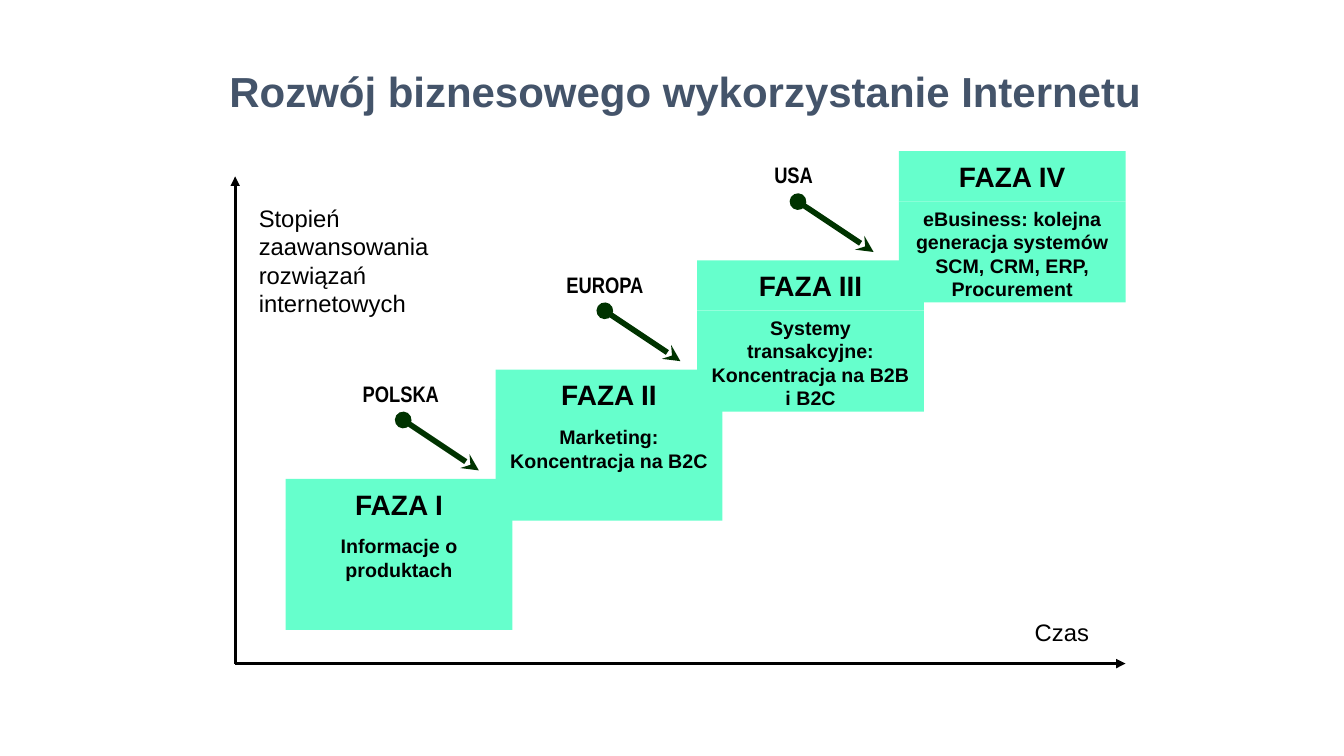
"""Build the slide on the phases of business use of the Internet."""
from lxml.etree import SubElement
from pptx import Presentation
from pptx.dml.color import RGBColor
from pptx.enum.shapes import MSO_CONNECTOR, MSO_SHAPE
from pptx.enum.text import MSO_ANCHOR, MSO_AUTO_SIZE, PP_ALIGN
from pptx.oxml.ns import qn
from pptx.util import Pt

PX = 9525
BLACK = RGBColor(0x00, 0x00, 0x00)
SLATE = RGBColor(0x44, 0x54, 0x6A)
MINT = RGBColor(0x66, 0xFF, 0xCC)
GREEN = RGBColor(0x00, 0x33, 0x00)

prs = Presentation()
prs.slide_width, prs.slide_height = 1280 * PX, 720 * PX
s = prs.slides.add_slide(prs.slide_layouts[6])


def add_text(text, x, y, w, h, size, bold=False, color=BLACK, font="Arial", fill=None,
             anchor=MSO_ANCHOR.TOP, align=PP_ALIGN.LEFT, wrap=True, grow=False, spacing=None):
    box = [v * PX for v in (x, y, w, h)]
    if fill is None:
        sp = s.shapes.add_textbox(*box)
    else:
        sp = s.shapes.add_shape(MSO_SHAPE.RECTANGLE, *box)
        sp.shadow.inherit = False
        sp.fill.solid()
        sp.fill.fore_color.rgb = fill
        sp.line.fill.background()
    tf = sp.text_frame
    tf.word_wrap = wrap
    tf.auto_size = MSO_AUTO_SIZE.SHAPE_TO_FIT_TEXT if grow else MSO_AUTO_SIZE.NONE
    tf.vertical_anchor = anchor
    tf.text = text
    for p in tf.paragraphs:
        p.alignment = align
        p.line_spacing = spacing
        for r in p.runs:
            r.font.name, r.font.size, r.font.bold = font, Pt(size), bold
            r.font.color.rgb = color


def add_arrow(x1, y1, x2, y2, color, width, **ends):
    line = s.shapes.add_connector(MSO_CONNECTOR.STRAIGHT, x1 * PX, y1 * PX, x2 * PX, y2 * PX)
    line.line.color.rgb = color
    line.line.width = Pt(width)
    ln = line.line._get_or_add_ln()
    for end, kind in ends.items():
        SubElement(ln, qn(f"a:{end}"), type=kind)
    SubElement(line._element.spPr, qn("a:effectLst"))


add_text("Rozwój biznesowego wykorzystanie Internetu", 209, 30, 1060, 112, 30,
         bold=True, color=SLATE, anchor=MSO_ANCHOR.MIDDLE)

phases = [
    ("FAZA I", 272, "Informacje o produktach"),
    ("FAZA II", 472, "Marketing:\nKoncentracja na B2C"),
    ("FAZA III", 664, "Systemy transakcyjne:\nKoncentracja na B2B i B2C"),
    ("FAZA IV", 856, "eBusiness: kolejna generacja systemów SCM, CRM, ERP, Procurement"),
]
for i, (name, x, description) in enumerate(phases):
    y = 456 - 104 * i
    add_text(description, x, y + 48, 216, 96, 14, bold=True, fill=MINT, align=PP_ALIGN.CENTER)
    add_text(name, x, y, 216, 48, 20, bold=True, fill=MINT,
             anchor=MSO_ANCHOR.MIDDLE, align=PP_ALIGN.CENTER)

for x, y in [(224, 168), (1072, 632)]:
    add_arrow(224, 632, x, y, BLACK, 2.25, tailEnd="triangle")
add_text("Czas", 976, 584, 71, 36, 17, wrap=False, grow=True)
add_text("Stopień\nzaawansowania\nrozwiązań internetowych", 237, 189, 211, 120, 17, grow=True)

regions = [("POLSKA", 336, 92, 384), ("EUROPA", 530, 94, 576), ("USA", 728, 57, 760)]
for i, (region, x, w, start) in enumerate(regions):
    y = 400 - 104 * i
    add_text(region, x, y - 40, w, 33, 16, bold=True, font="Arial Narrow",
             wrap=False, grow=True, spacing=0.9)
    add_arrow(start, y, start + 72, y + 48, GREEN, 4, headEnd="oval", tailEnd="stealth")

prs.save("out.pptx")
